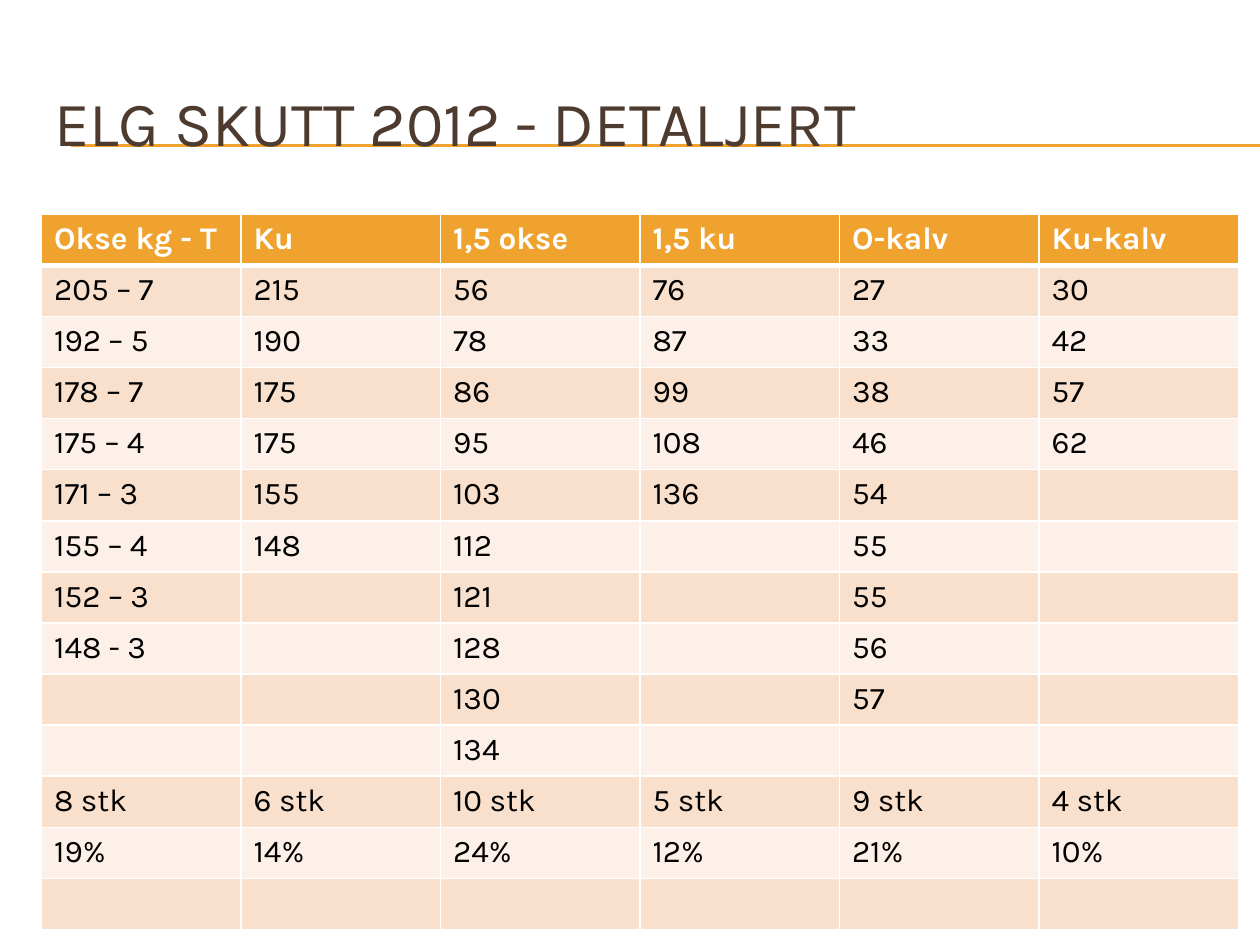
"""Build the slide with the detailed moose harvest of 2012."""
from dataclasses import dataclass

from lxml.etree import SubElement
from pptx import Presentation
from pptx.dml.color import RGBColor
from pptx.enum.shapes import MSO_CONNECTOR
from pptx.enum.text import MSO_ANCHOR, PP_ALIGN
from pptx.oxml.ns import qn
from pptx.util import Inches, Pt

FONT = "Karla"
COLORS = {
    "accent": "F0A22E",
    "title": "4E3B30",
    "white": "FFFFFF",
    "text": "000000",
    "odd": "F9E0CD",
    "even": "FCF0E8",
}
WEIGHT_ROWS = 10
TABLE_WIDTH, TABLE_HEIGHT = 9.5, 5.68


@dataclass
class Category:
    heading: str
    weights: list[str]
    count: str
    share: str

    def cells(self) -> list[str]:
        padding = [""] * (WEIGHT_ROWS - len(self.weights))
        return [self.heading, *self.weights, *padding, self.count, self.share, ""]


CATEGORIES = [
    Category("Okse kg - T",
             ["205 – 7", "192 – 5", "178 – 7", "175 – 4",
              "171 – 3", "155 – 4", "152 – 3", "148 - 3"], "8 stk", "19%"),
    Category("Ku", ["215", "190", "175", "175", "155", "148"], "6 stk", "14%"),
    Category("1,5 okse",
             ["56", "78", "86", "95", "103", "112", "121", "128", "130", "134"],
             "10 stk", "24%"),
    Category("1,5 ku", ["76", "87", "99", "108", "136"], "5 stk", "12%"),
    Category("O-kalv",
             ["27", "33", "38", "46", "54", "55", "55", "56", "57"], "9 stk", "21%"),
    Category("Ku-kalv", ["30", "42", "57", "62"], "4 stk", "10%"),
]


def color(name: str) -> RGBColor:
    return RGBColor.from_string(COLORS[name])


def format_text(para, size: float, color_name: str, bold: bool = False) -> None:
    para.font.name = FONT
    para.font.size = Pt(size)
    para.font.bold = bold
    para.font.color.rgb = color(color_name)


def add_title(page, text: str):
    title = page.shapes.title
    title.left, title.top = Inches(0.33), Inches(0.5)
    title.width, title.height = Inches(9.5), Inches(0.92)
    frame = title.text_frame
    frame.text = text
    frame.vertical_anchor = MSO_ANCHOR.MIDDLE
    para = frame.paragraphs[0]
    para.alignment = PP_ALIGN.LEFT
    format_text(para, 36, "title")
    return title


def add_rule(page, title, top: float) -> None:
    rule = page.shapes.add_connector(
        MSO_CONNECTOR.STRAIGHT, Inches(0.56), Inches(top), Inches(10), Inches(top))
    rule.line.color.rgb = color("accent")
    rule.line.width = Pt(0.75)
    SubElement(rule.element.spPr, qn("a:effectLst"))
    title.element.addprevious(rule.element)


def set_borders(cell, top: float, bottom: float) -> None:
    properties = cell._tc.get_or_add_tcPr()
    for side, width in {"L": 1, "R": 1, "T": top, "B": bottom}.items():
        border = SubElement(properties, qn(f"a:ln{side}"), w=str(Pt(width)))
        fill = SubElement(border, qn("a:solidFill"))
        SubElement(fill, qn("a:srgbClr"), val=COLORS["white"])


def format_cell(cell, text: str, row: int) -> None:
    header = row == 0
    cell.text = text
    format_text(cell.text_frame.paragraphs[0], 18, "white" if header else "text", header)
    set_borders(cell, top=3 if row == 1 else 1, bottom=3 if header else 1)
    cell.fill.solid()
    cell.fill.fore_color.rgb = color("accent" if header else "odd" if row % 2 else "even")


def add_harvest_table(page, categories: list[Category]) -> None:
    row_count = len(categories[0].cells())
    table = page.shapes.add_table(
        row_count, len(categories), Inches(0.33), Inches(1.7),
        Inches(TABLE_WIDTH), Inches(TABLE_HEIGHT)).table
    for row in table.rows:
        row.height = Inches(TABLE_HEIGHT / row_count)
    for column, category in enumerate(categories):
        table.columns[column].width = Inches(TABLE_WIDTH / len(categories))
        for row, text in enumerate(category.cells()):
            format_cell(table.cell(row, column), text, row)


def main() -> None:
    deck = Presentation()
    deck.slide_width, deck.slide_height = Inches(10), Inches(7.5)
    page = deck.slides.add_slide(deck.slide_layouts[5])
    title = add_title(page, "ELG SKUTT 2012 - DETALJERT")
    for top in (1.15, 1.16):
        add_rule(page, title, top)
    add_harvest_table(page, CATEGORIES)
    deck.save("out.pptx")


if __name__ == "__main__":
    main()
